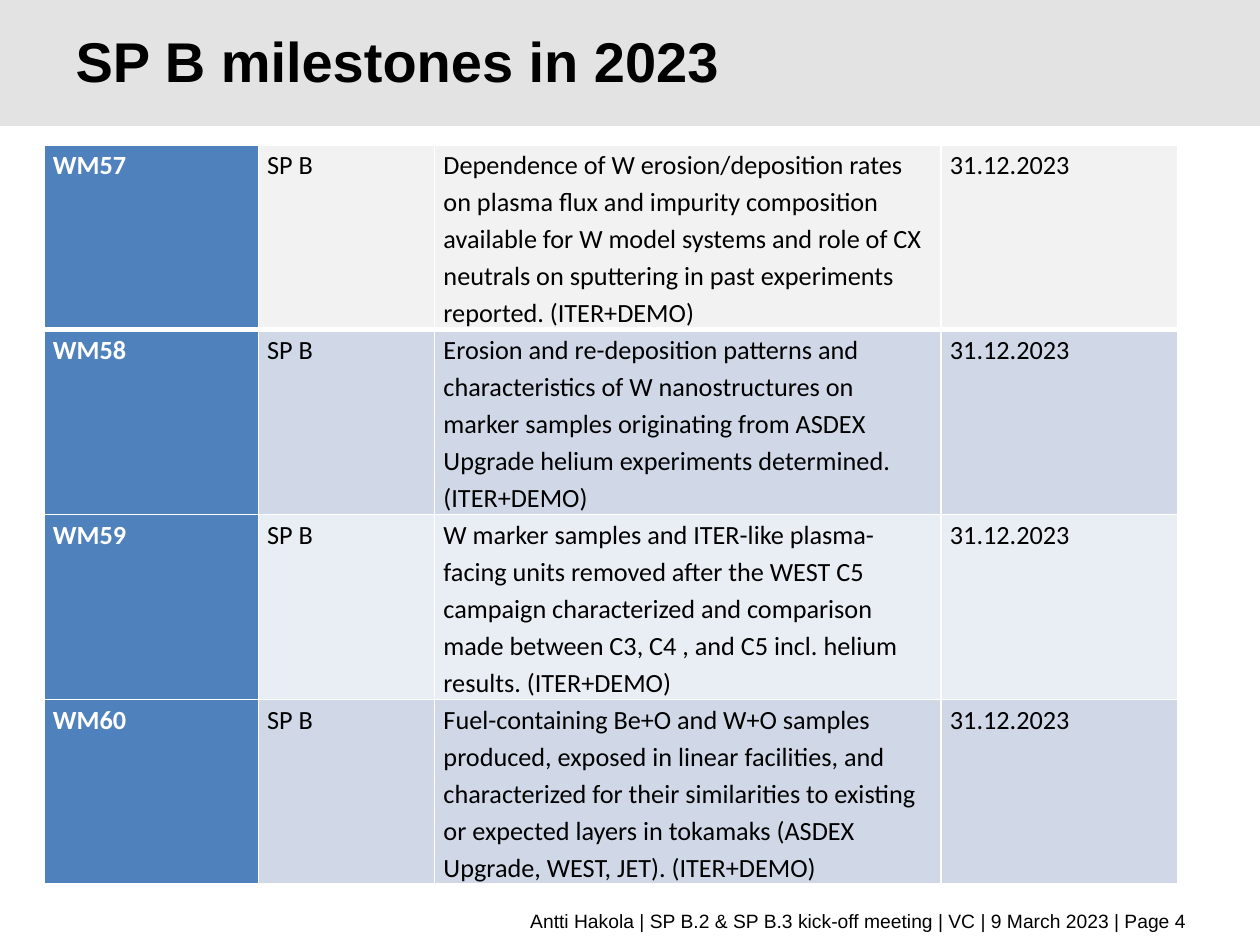
"""Build the SP B milestones slide."""
from lxml import etree
from pptx import Presentation
from pptx import util as u
from pptx.dml.color import RGBColor
from pptx.enum import shapes, text
from pptx.oxml.ns import qn

TITLE = "SP B milestones in 2023"
FOOT = "Antti Hakola | SP B.2 & SP B.3 kick-off meeting | VC | 9 March 2023 | Page 4"
GOALS = [
    ("WM57", "Dependence of W erosion/deposition rates on plasma flux and impurity composition "
             "available for W model systems and role of CX neutrals on sputtering in past "
             "experiments reported. (ITER+DEMO)"),
    ("WM58", "Erosion and re-deposition patterns and characteristics of W nanostructures on "
             "marker samples originating from ASDEX Upgrade helium experiments determined. "
             "(ITER+DEMO)"),
    ("WM59", "W marker samples and ITER-like plasma-facing units removed after the WEST C5 "
             "campaign characterized and comparison made between C3, C4 , and C5 incl. helium "
             "results. (ITER+DEMO)"),
    ("WM60", "Fuel-containing Be+O and W+O samples produced, exposed in linear facilities, and "
             "characterized for their similarities to existing or expected layers in tokamaks "
             "(ASDEX Upgrade, WEST, JET). (ITER+DEMO)"),
]
ROWS = [(code, "SP B", goal, "31.12.2023") for code, goal in GOALS]
COLS = [1.7, 1.4, 4.02, 1.88]
HIGH = 1.46
THEME = {
    "ink": "000000", "paper": "FFFFFF", "band": "E3E3E3", "key": "4F81BD",
    "rows": ["F2F2F2", "D0D8E8", "E9EDF4", "D0D8E8"],
    "title": {"name": "Arial", "size": u.Pt(32), "bold": True},
    "foot": {"name": "Arial", "size": u.Pt(11), "bold": False},
    "cell": {"name": "Calibri", "size": u.Pt(15), "bold": False},
    "code": {"name": "Calibri", "size": u.Pt(15), "bold": True},
}
PAD = {"margin_left": u.Inches(0.07), "margin_right": u.Inches(0.07),
       "margin_top": 0, "margin_bottom": 0}


def put(obj, vals):
    for key, val in vals.items():
        setattr(obj, key, val)


def paint(fill, tone):
    fill.solid()
    fill.fore_color.rgb = RGBColor.from_string(tone)


def write(frame, words, style, tone, **form):
    frame.text = words
    para = frame.paragraphs[0]
    put(para, form)
    put(para.font, THEME[style])
    para.font.color.rgb = RGBColor.from_string(tone)


def edge(cell, top, low):
    prop = cell._tc.get_or_add_tcPr()
    for spot, (side, wide) in enumerate((("L", 1), ("R", 1), ("T", top), ("B", low))):
        line = etree.Element(qn(f"a:ln{side}"), w=str(u.Pt(wide)))
        fill = etree.SubElement(line, qn("a:solidFill"))
        etree.SubElement(fill, qn("a:srgbClr"), val=THEME["paper"])
        prop.insert(spot, line)


def place(shape, *box):
    put(shape, dict(zip(("left", "top", "width", "height"), map(u.Inches, box))))


def grid(slide):
    table = slide.shapes.add_table(len(ROWS), len(COLS), u.Inches(0.35), u.Inches(1.15),
                                   u.Inches(sum(COLS)), u.Inches(HIGH * len(ROWS))).table
    put(table, {"first_row": False, "horz_banding": False})
    for col, wide in zip(table.columns, COLS):
        col.width = u.Inches(wide)
    for r, row in enumerate(ROWS):
        table.rows[r].height = u.Inches(HIGH)
        for c, words in enumerate(row):
            cell = table.cell(r, c)
            put(cell, PAD)
            style, tone, fill = (("cell", THEME["ink"], THEME["rows"][r]) if c else
                                 ("code", THEME["paper"], THEME["key"]))
            write(cell.text_frame, words, style, tone, line_spacing=1.15, space_after=u.Pt(3))
            paint(cell.fill, fill)
            edge(cell, 3 if r == 1 else 1, 3 if r == 0 else 1)


def main():
    deck = Presentation()
    put(deck, {"slide_width": u.Inches(10), "slide_height": u.Inches(7.5)})
    slide = deck.slides.add_slide(deck.slide_layouts[5])
    title = slide.shapes.title

    band = slide.shapes.add_shape(shapes.MSO_SHAPE.RECTANGLE, 0, 0, deck.slide_width, u.Inches(1))
    band.shadow.inherit = False
    paint(band.fill, THEME["band"])
    band.line.fill.background()
    title._element.addprevious(band._element)

    place(title, 0.5, 0.05, 8.25, 0.95)
    mid = {"word_wrap": True, "vertical_anchor": text.MSO_ANCHOR.MIDDLE}
    put(title.text_frame, {**mid, "auto_size": text.MSO_AUTO_SIZE.NONE})
    write(title.text_frame, TITLE, "title", THEME["ink"],
          alignment=text.PP_ALIGN.LEFT, line_spacing=u.Pt(32))

    grid(slide)

    foot = slide.shapes.add_textbox(0, 0, 0, 0)
    place(foot, 0.51, 7.16, 9.01, 0.29)
    put(foot.text_frame, mid)
    write(foot.text_frame, FOOT, "foot", THEME["ink"], alignment=text.PP_ALIGN.RIGHT)
    deck.save("out.pptx")


if __name__ == "__main__":
    main()
